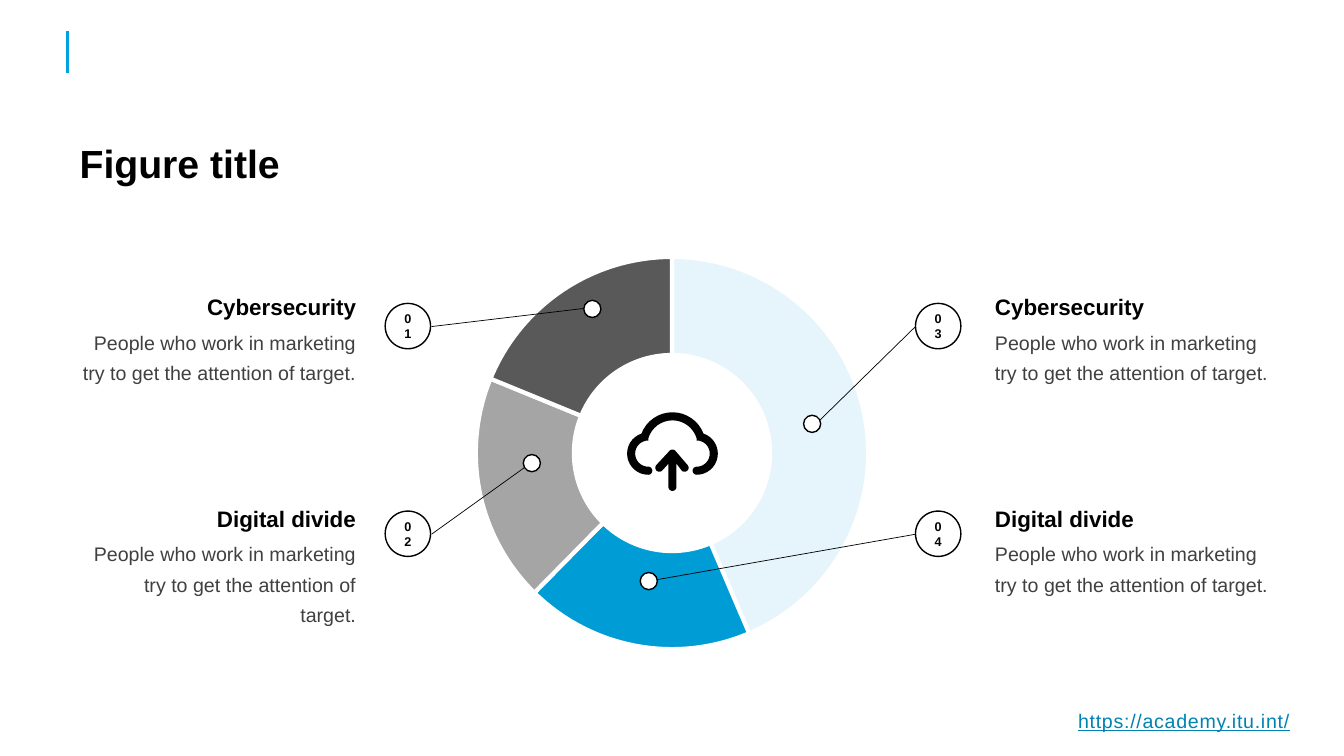
import math

from lxml import etree
from pptx import Presentation
from pptx import util as u
from pptx.chart import data
from pptx.dml.color import RGBColor
from pptx.enum import chart as charts, shapes, text
from pptx.oxml import ns

BLACK = RGBColor(0, 0, 0)
WHITE = RGBColor(255, 255, 255)
BODY_GREY = RGBColor(0x40, 0x40, 0x40)
LINK_BLUE = RGBColor(0x00, 0x83, 0xB3)
ACCENT_BLUE = RGBColor(0x00, 0xA3, 0xE0)
RING_COLOURS = [
    RGBColor(0xE5, 0xF5, 0xFB),
    RGBColor(0x00, 0x9C, 0xD6),
    RGBColor(0xA5, 0xA5, 0xA5),
    RGBColor(0x59, 0x59, 0x59),
]
LEFT, CENTER, RIGHT = text.PP_ALIGN.LEFT, text.PP_ALIGN.CENTER, text.PP_ALIGN.RIGHT
BODY = "People who work in marketing try to get the attention of target."
BADGE = 0.45
DOT = 0.17
LEFT_EDGE = 3.63
RIGHT_EDGE = 9.77
ROW_TOPS = {"Cybersecurity": 2.78, "Digital divide": 4.88}
HEADING_WIDTHS = {"Cybersecurity": 1.69, "Digital divide": 2.37}


def write(shape, words, size, color=BLACK, bold=False, align=LEFT, spacing=None,
          underline=False, tracking=None, anchor=text.MSO_ANCHOR.TOP):
    frame = shape.text_frame
    frame.word_wrap = True
    frame.vertical_anchor = anchor
    para = frame.paragraphs[0]
    para.alignment = align
    para.line_spacing = spacing
    span = para.add_run()
    span.text = words
    font = span.font
    font.name, font.size, font.bold = "Arial", u.Pt(size), bold
    font.underline = underline
    font.color.rgb = color
    if tracking:
        font._element.set("spc", str(int(tracking * 100)))


def add_text(page, left, top, width, height, words, size, **style):
    box = page.shapes.add_textbox(
        u.Inches(left), u.Inches(top), u.Inches(width), u.Inches(height))
    write(box, words, size, **style)


def add_line(page, start, end, color, width):
    line = page.shapes.add_connector(
        shapes.MSO_CONNECTOR.STRAIGHT, *[u.Inches(n) for n in (*start, *end)])
    line.line.color.rgb = color
    line.line.width = u.Pt(width)
    etree.SubElement(line._element.spPr, ns.qn("a:effectLst"))


def add_circle(page, left, top, size):
    circle = page.shapes.add_shape(
        shapes.MSO_SHAPE.OVAL, u.Inches(left), u.Inches(top), u.Inches(size), u.Inches(size))
    circle.shadow.inherit = False
    circle.fill.solid()
    circle.fill.fore_color.rgb = WHITE
    circle.line.color.rgb = BLACK
    circle.line.width = u.Pt(1)
    return circle


def add_callout(page, number, heading, body_width, badge, dot, line_start, line_end):
    top, heading_width = ROW_TOPS[heading], HEADING_WIDTHS[heading]
    on_left = badge[0] < RIGHT_EDGE / 2
    align = RIGHT if on_left else LEFT
    for words, offset, width, height, size, color, bold in (
            (BODY, 0.38, body_width, 0.57, 14, BODY_GREY, False),
            (heading, 0, heading_width, 0.44, 16, BLACK, True)):
        left = LEFT_EDGE - width if on_left else RIGHT_EDGE
        add_text(page, left, top + offset, width, height, words, size,
                 color=color, bold=bold, align=align, spacing=1.3)
    write(add_circle(page, *badge, BADGE), number, 9, bold=True, align=CENTER,
          anchor=text.MSO_ANCHOR.MIDDLE)
    add_circle(page, *dot, DOT)
    add_line(page, line_start, line_end, BLACK, 0.5)


def add_ring(page):
    values = data.CategoryChartData()
    values.categories = ["1", "2", "3", "4"]
    values.add_series("Series 1", (44, 19, 19, 19))
    ring = page.shapes.add_chart(
        charts.XL_CHART_TYPE.DOUGHNUT, u.Inches(4.58), u.Inches(2.38),
        u.Inches(4.17), u.Inches(4.23), values).chart
    ring.has_legend = ring.has_title = False
    ring.font.name, ring.font.size, ring.font.bold = "Arial", u.Pt(24), True
    ring.font.color.rgb = WHITE
    plot = ring.plots[0]
    plot.vary_by_categories = True
    for index, color in enumerate(RING_COLOURS):
        form = plot.series[0].points[index].format
        form.fill.solid()
        form.fill.fore_color.rgb = color
        form.line.color.rgb = WHITE
        form.line.width = u.Pt(3)
    area = ring._chartSpace.find(".//" + ns.qn("c:plotArea"))
    for layout in area.findall(ns.qn("c:layout")):
        area.remove(layout)
    layout = etree.Element(ns.qn("c:layout"))
    area.insert(0, layout)
    manual = etree.SubElement(layout, ns.qn("c:manualLayout"))
    for tag, value in (("layoutTarget", "inner"), ("xMode", "edge"), ("yMode", "edge"),
                       ("x", 0.03), ("y", 0.04), ("w", 0.94), ("h", 0.92)):
        etree.SubElement(manual, ns.qn("c:" + tag)).set("val", str(value))


def arc(x, y, radius, start, end, steps=16):
    angles = [math.radians(start + (end - start) * i / steps) for i in range(steps + 1)]
    return [(x + radius * math.cos(a), y + radius * math.sin(a)) for a in angles]


def add_cloud_icon(page):
    cloud = (arc(6.43, 4.5, 0.21, 90, 251) + arc(6.67, 4.42, 0.33, 201, 339)
             + arc(6.91, 4.5, 0.21, 289, 450) + arc(6.91, 4.67, 0.04, 90, 270)
             + arc(6.91, 4.5, 0.13, 450, 270) + arc(6.67, 4.42, 0.25, 343, 197)
             + arc(6.43, 4.5, 0.13, 270, 90) + arc(6.43, 4.67, 0.04, -90, 90))
    arrow = (arc(6.54, 4.64, 0.04, 45, 225) + arc(6.67, 4.5, 0.04, 225, 315)
             + arc(6.79, 4.64, 0.04, 315, 495) + [(6.71, 4.6)]
             + arc(6.67, 4.83, 0.04, 0, 180) + [(6.63, 4.6)])
    cloud, arrow = ([(u.Inches(x), u.Inches(y)) for x, y in outline]
                    for outline in (cloud, arrow))
    builder = page.shapes.build_freeform(*cloud[0])
    builder.add_line_segments(cloud[1:])
    builder.move_to(*arrow[0])
    builder.add_line_segments(arrow[1:])
    icon = builder.convert_to_shape()
    icon.shadow.inherit = False
    icon.fill.solid()
    icon.fill.fore_color.rgb = BLACK
    icon.line.fill.background()


def add_title(page, words):
    title = page.shapes.title
    title.left, title.top = u.Inches(0.69), u.Inches(1.38)
    title.width, title.height = u.Inches(9.91), u.Inches(0.53)
    write(title, words, 28, bold=True, spacing=0.9, anchor=text.MSO_ANCHOR.MIDDLE)


def main():
    deck = Presentation()
    deck.slide_width, deck.slide_height = u.Inches(13.33), u.Inches(7.5)
    page = deck.slides.add_slide(deck.slide_layouts[5])
    add_title(page, "Figure title")
    add_text(page, 10.16, 6.98, 2.73, 0.34, "https://academy.itu.int/", 14,
             color=LINK_BLUE, align=RIGHT, underline=True, tracking=0.5)
    add_line(page, (0.67, 0.31), (0.67, 0.72), ACCENT_BLUE, 2)
    add_ring(page)
    add_cloud_icon(page)
    for callout in (
            ("03", "Cybersecurity", 2.91, (9.08, 3.01), (7.97, 4.12), (8.13, 4.17), (9.08, 3.24)),
            ("01", "Cybersecurity", 2.95, (3.82, 3.01), (5.79, 2.98), (4.28, 3.24), (5.79, 3.06)),
            ("02", "Digital divide", 2.9, (3.82, 5.07), (5.19, 4.51), (4.28, 5.3), (5.2, 4.64)),
            ("04", "Digital divide", 2.91, (9.08, 5.07), (6.35, 5.68), (9.08, 5.3), (6.52, 5.75))):
        add_callout(page, *callout)
    deck.save("out.pptx")


if __name__ == "__main__":
    main()
